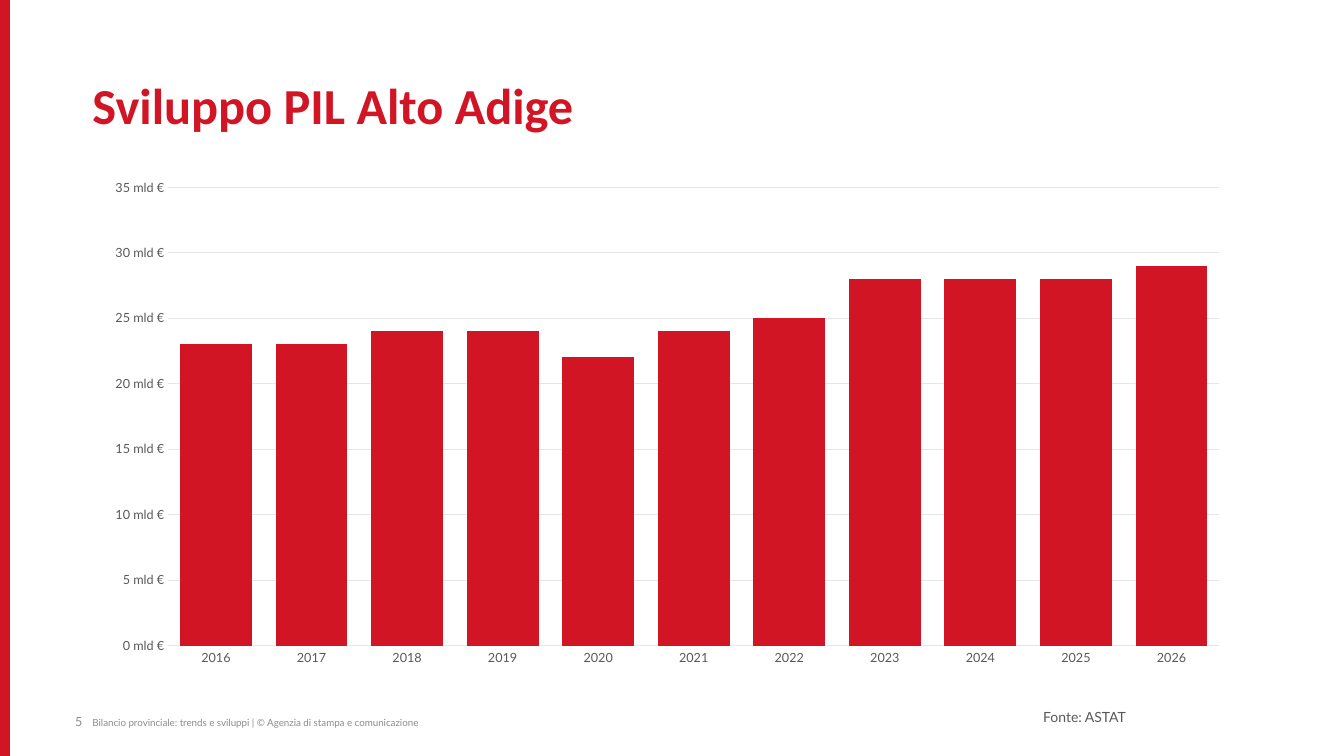
from dataclasses import dataclass

import pptx
import pptx.chart.data
import pptx.dml.color
import pptx.enum.chart
import pptx.enum.shapes
import pptx.enum.text
import pptx.oxml
import pptx.oxml.ns
import pptx.util
from pptx.util import Cm


@dataclass(frozen=True)
class Theme:
    red: str = "D11524"
    bar_red: str = "D11525"
    dark_grey: str = "595959"
    mid_grey: str = "8C8C8C"
    light_grey: str = "E6E6E6"
    title_font: str = "Calibri"
    body_font: str = "Lato"
    title_size: float = 36
    body_size: float = 10
    small_size: float = 9
    footer_size: float = 7
    hairline: float = 0.75
    stripe: float = 7.5


THEME = Theme()
LEFT_EDGE = 2.33
# Millions of euros, rounded to the whole billions of the axis labels
GDP_BY_YEAR = {
    "2016": 23000, "2017": 23000, "2018": 24000, "2019": 24000,
    "2020": 22000, "2021": 24000, "2022": 25000, "2023": 28000,
    "2024": 28000, "2025": 28000, "2026": 29000,
}


def rgb(code):
    return pptx.dml.color.RGBColor.from_string(code)


def style_font(font, size, color, name=THEME.body_font, bold=False):
    font.name = name
    font.size = pptx.util.Pt(size)
    font.bold = bold
    font.color.rgb = rgb(color)


def style_line(line, color, width):
    line.color.rgb = rgb(color)
    line.width = pptx.util.Pt(width)


def clear_margins(frame):
    frame.margin_left = frame.margin_top = 0
    frame.margin_right = frame.margin_bottom = 0


def add_stripe(page, height):
    stripe = page.shapes.add_connector(
        pptx.enum.shapes.MSO_CONNECTOR.STRAIGHT, Cm(0.13), 0, Cm(0.13), height)
    style_line(stripe.line, THEME.red, THEME.stripe)
    properties = stripe.element.spPr
    properties.append(pptx.oxml.parse_xml(
        f"<a:effectLst {pptx.oxml.ns.nsdecls('a')}/>"))


def set_title(page, text):
    title = page.shapes.title
    title.left, title.top = Cm(LEFT_EDGE), Cm(2.03)
    title.width, title.height = Cm(29.21), Cm(2.67)
    frame = title.text_frame
    clear_margins(frame)
    frame.vertical_anchor = pptx.enum.text.MSO_ANCHOR.TOP
    para = frame.paragraphs[0]
    para.alignment = pptx.enum.text.PP_ALIGN.LEFT
    para.line_spacing = 0.9
    span = para.add_run()
    span.text = text
    style_font(span.font, THEME.title_size, THEME.red, THEME.title_font, bold=True)


def add_label(page, text, left, top, width, height, size, color,
              align=pptx.enum.text.PP_ALIGN.LEFT, inset=False):
    box = page.shapes.add_textbox(Cm(left), Cm(top), Cm(width), Cm(height))
    frame = box.text_frame
    frame.word_wrap = True
    if not inset:
        clear_margins(frame)
    para = frame.paragraphs[0]
    para.alignment = align
    span = para.add_run()
    span.text = text
    style_font(span.font, size, color)


def place_plot(frame, left, top, width, height):
    """Fix the inner plot area, in lengths from the corner of the chart frame."""
    plot_area = frame.chart.element.chart.plotArea
    for layout in plot_area.findall(pptx.oxml.ns.qn("c:layout")):
        plot_area.remove(layout)
    plot_area.insert(0, pptx.oxml.parse_xml(
        f"<c:layout {pptx.oxml.ns.nsdecls('c')}><c:manualLayout>"
        '<c:layoutTarget val="inner"/><c:xMode val="edge"/><c:yMode val="edge"/>'
        f'<c:x val="{left / frame.width}"/><c:y val="{top / frame.height}"/>'
        f'<c:w val="{width / frame.width}"/><c:h val="{height / frame.height}"/>'
        "</c:manualLayout></c:layout>"))


def style_axis(axis):
    axis.major_tick_mark = pptx.enum.chart.XL_TICK_MARK.NONE
    axis.minor_tick_mark = pptx.enum.chart.XL_TICK_MARK.NONE
    style_font(axis.tick_labels.font, THEME.small_size, THEME.dark_grey)


def add_gdp_chart(page):
    data = pptx.chart.data.CategoryChartData()
    data.categories = list(GDP_BY_YEAR)
    data.add_series("Series 1", list(GDP_BY_YEAR.values()))
    frame = page.shapes.add_chart(
        pptx.enum.chart.XL_CHART_TYPE.COLUMN_CLUSTERED,
        Cm(LEFT_EDGE), Cm(4.27), Cm(28.98), Cm(12.75), data)
    chart = frame.chart
    chart.has_legend = False
    chart.has_title = False
    style_font(chart.font, THEME.body_size, THEME.dark_grey)
    place_plot(frame, Cm(1.91), Cm(0.45), Cm(26.49), Cm(11.55))

    years, amounts = chart.category_axis, chart.value_axis
    style_axis(years)
    style_axis(amounts)
    style_line(years.format.line, THEME.light_grey, THEME.hairline)
    amounts.format.line.fill.background()
    amounts.has_major_gridlines = True
    style_line(amounts.major_gridlines.format.line, THEME.light_grey, THEME.hairline)
    amounts.minimum_scale, amounts.maximum_scale = 0, 35000
    amounts.major_unit = 5000
    amounts.tick_labels.number_format = '#,##0,\\ "mld €"'
    amounts.tick_labels.number_format_is_linked = False

    plot = chart.plots[0]
    plot.vary_by_categories = False
    plot.gap_width = 33
    plot.overlap = -27
    fill = plot.series[0].format.fill
    fill.solid()
    fill.fore_color.rgb = rgb(THEME.bar_red)


def main():
    deck = pptx.Presentation()
    deck.slide_width, deck.slide_height = Cm(33.87), Cm(19.05)
    page = deck.slides.add_slide(deck.slide_layouts.get_by_name("Title Only"))
    add_stripe(page, deck.slide_height)
    set_title(page, "Sviluppo PIL Alto Adige")
    add_label(page, "Bilancio provinciale: trends e sviluppi | © Agenzia di stampa e comunicazione",
              LEFT_EDGE, 18.06, 13.69, 0.25, THEME.footer_size, THEME.mid_grey)
    add_label(page, "5", 0.61, 17.98, 1.47, 0.38, THEME.small_size, THEME.mid_grey,
              align=pptx.enum.text.PP_ALIGN.RIGHT)
    add_label(page, "Fonte: ASTAT", 26.04, 17.73, 6.48, 0.69,
              THEME.body_size, THEME.dark_grey, inset=True)
    add_gdp_chart(page)
    deck.save("out.pptx")


if __name__ == "__main__":
    main()
